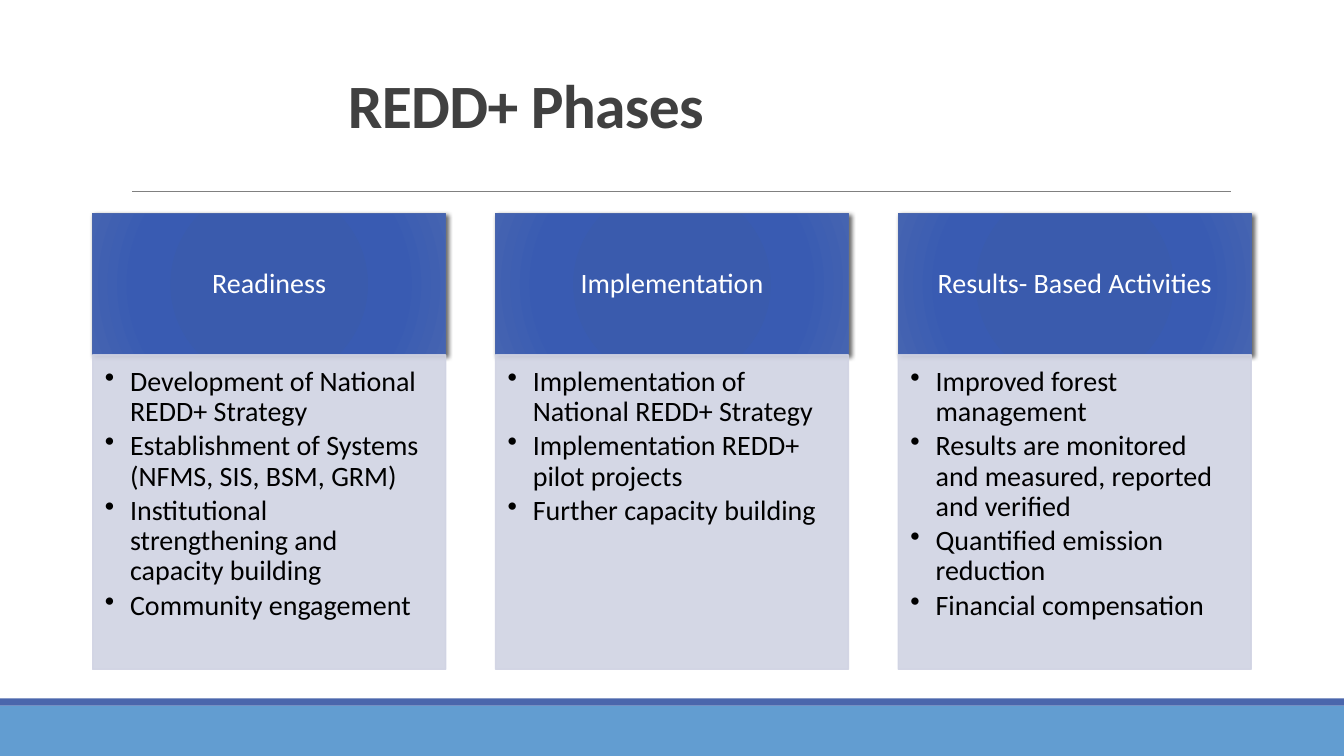
from dataclasses import dataclass

from lxml.etree import SubElement
from pptx import Presentation
from pptx.dml.color import RGBColor
from pptx.enum.shapes import MSO_CONNECTOR, MSO_SHAPE
from pptx.enum.text import MSO_ANCHOR, MSO_AUTO_SIZE, PP_ALIGN
from pptx.oxml import parse_xml
from pptx.oxml.ns import nsdecls, qn
from pptx.util import Inches, Pt


@dataclass(frozen=True)
class Theme:
    """Colours, font and type sizes of the slide."""
    font: str = "Calibri"
    title_size: int = 44
    text_size: int = 20
    title: str = "404040"
    heading: str = "FFFFFF"
    bullet: str = "000000"
    rule: str = "808080"
    band: str = "629DD1"
    accent: str = "4A66AC"
    panel: str = "D0D3E3"
    shadow: str = "000000"
    glow: tuple = ((0, "3759AE"), (34, "3A5BAD"), (70, "395BB2"), (100, "4564B1"))


THEME = Theme()
SLIDE_WIDTH, SLIDE_HEIGHT = 13.33, 7.5
COLUMNS_LEFT, COLUMNS_RIGHT, COLUMN_WIDTH = 0.92, 12.41, 3.5
HEADING_TOP, HEADING_HEIGHT, PANEL_HEIGHT = 2.12, 1.4, 3.12
PANEL_OPACITY = 90

PHASES = {
    "Readiness": [
        "Development of National REDD+ Strategy",
        "Establishment of Systems (NFMS, SIS, BSM, GRM)",
        "Institutional strengthening and capacity building",
        "Community engagement",
    ],
    "Implementation": [
        "Implementation of National REDD+ Strategy",
        "Implementation REDD+ pilot projects",
        "Further capacity building",
    ],
    "Results- Based Activities": [
        "Improved forest management",
        "Results are monitored and measured, reported and verified",
        "Quantified emission reduction",
        "Financial compensation",
    ],
}

TITLE_FRAME = {"vertical_anchor": MSO_ANCHOR.BOTTOM, "auto_size": MSO_AUTO_SIZE.NONE,
               "word_wrap": True}
HEADING_FRAME = {"vertical_anchor": MSO_ANCHOR.MIDDLE, "word_wrap": True,
                 "margin_left": Inches(0.16), "margin_top": Inches(0.09),
                 "margin_right": Inches(0.16), "margin_bottom": Inches(0.09)}
PANEL_FRAME = {"vertical_anchor": MSO_ANCHOR.TOP, "word_wrap": True,
               "margin_left": Inches(0.12), "margin_top": Inches(0.12),
               "margin_right": Inches(0.16), "margin_bottom": Inches(0.17)}
TITLE_PARAGRAPH = {"alignment": PP_ALIGN.LEFT, "line_spacing": 0.85}
HEADING_PARAGRAPH = {"alignment": PP_ALIGN.CENTER, "line_spacing": 0.9}
BULLET_PARAGRAPH = {"alignment": PP_ALIGN.LEFT, "line_spacing": 0.9,
                    "space_after": Pt(3), "level": 1}


def apply_format(target, values):
    """Set every attribute in values on target."""
    for name, value in values.items():
        setattr(target, name, value)


def write_paragraph(paragraph, text, paragraph_format, size, color, bold=False):
    """Write one formatted run into a paragraph and return the run."""
    apply_format(paragraph, paragraph_format)
    run = paragraph.add_run()
    run.text = text
    apply_format(run.font, {"name": THEME.font, "size": Pt(size), "bold": bold})
    run.font.color.rgb = RGBColor.from_string(color)
    return run


def add_bullet(paragraph):
    """Give a paragraph a hanging round bullet."""
    properties = paragraph._p.get_or_add_pPr()
    properties.set("marL", str(Inches(0.25)))
    properties.set("indent", str(-Inches(0.25)))
    SubElement(properties, qn("a:buChar"), char="•")


def set_opacity(color_format_parent, percent):
    """Make the solid colour below an element partly transparent."""
    color = color_format_parent.find(qn("a:solidFill"))[0]
    SubElement(color, qn("a:alpha"), val=str(percent * 1000))


def add_block(slide, left, top, width, height, color, line_color=None):
    """Add a flat rectangle with an optional outline."""
    block = slide.shapes.add_shape(MSO_SHAPE.RECTANGLE, Inches(left), Inches(top),
                                   Inches(width), Inches(height))
    block.fill.solid()
    block.fill.fore_color.rgb = RGBColor.from_string(color)
    if line_color:
        block.line.color.rgb = RGBColor.from_string(line_color)
        block.line.width = Pt(1)
    else:
        block.line.fill.background()
    block.shadow.inherit = False
    return block


def add_glow(block):
    """Swap a block's fill for a radial gradient and cast a soft shadow."""
    properties = block.element.spPr
    stops = "".join(f'<a:gs pos="{position * 1000}"><a:srgbClr val="{color}"/></a:gs>'
                    for position, color in THEME.glow)
    gradient = parse_xml(
        f'<a:gradFill {nsdecls("a")} rotWithShape="1"><a:gsLst>{stops}</a:gsLst>'
        '<a:path path="circle"><a:fillToRect l="100000" t="100000" r="100000" b="100000"/>'
        '</a:path></a:gradFill>')
    properties.replace(properties.find(qn("a:solidFill")), gradient)
    shadow = SubElement(properties.find(qn("a:effectLst")), qn("a:outerShdw"),
                        blurRad=str(Pt(3)), dist=str(Pt(2)), dir=str(45 * 60000),
                        algn="ctr", rotWithShape="0")
    shadow_color = SubElement(shadow, qn("a:srgbClr"), val=THEME.shadow)
    SubElement(shadow_color, qn("a:alpha"), val="60000")


def add_title(slide, text):
    """Place and fill the title placeholder."""
    title = slide.shapes.title
    apply_format(title, {"left": Inches(3.35), "top": Inches(0),
                         "width": Inches(8.93), "height": Inches(1.45)})
    apply_format(title.text_frame, TITLE_FRAME)
    run = write_paragraph(title.text_frame.paragraphs[0], text, TITLE_PARAGRAPH,
                          THEME.title_size, THEME.title, bold=True)
    run.font._element.set("spc", "-50")


def add_rule(slide):
    """Draw the thin line under the title."""
    rule = slide.shapes.add_connector(MSO_CONNECTOR.STRAIGHT, Inches(1.31), Inches(1.9),
                                      Inches(12.21), Inches(1.9))
    rule.line.color.rgb = RGBColor.from_string(THEME.rule)
    rule.line.width = Pt(0.5)
    SubElement(rule.element.spPr, qn("a:effectLst"))


def add_phase(slide, left, name, activities):
    """Add one phase: a heading block above its list of activities."""
    panel_top = HEADING_TOP + HEADING_HEIGHT
    heading = add_block(slide, left, HEADING_TOP, COLUMN_WIDTH, HEADING_HEIGHT,
                        THEME.accent, THEME.accent)
    add_glow(heading)
    apply_format(heading.text_frame, HEADING_FRAME)
    write_paragraph(heading.text_frame.paragraphs[0], name, HEADING_PARAGRAPH,
                    THEME.text_size, THEME.heading)

    panel = add_block(slide, left, panel_top, COLUMN_WIDTH, PANEL_HEIGHT,
                      THEME.panel, THEME.panel)
    properties = panel.element.spPr
    for painted in (properties, properties.find(qn("a:ln"))):
        set_opacity(painted, PANEL_OPACITY)
    frame = panel.text_frame
    apply_format(frame, PANEL_FRAME)
    for index, activity in enumerate(activities):
        paragraph = frame.add_paragraph() if index else frame.paragraphs[0]
        write_paragraph(paragraph, activity, BULLET_PARAGRAPH,
                        THEME.text_size, THEME.bullet)
        add_bullet(paragraph)


def main():
    """Build the slide and save it."""
    presentation = Presentation()
    presentation.slide_width = Inches(SLIDE_WIDTH)
    presentation.slide_height = Inches(SLIDE_HEIGHT)
    slide = presentation.slides.add_slide(presentation.slide_layouts[5])

    add_block(slide, 0, 7, SLIDE_WIDTH, 0.5, THEME.band)
    add_block(slide, 0, 6.93, SLIDE_WIDTH, 0.07, THEME.accent)
    add_rule(slide)
    add_title(slide, "REDD+ Phases")

    pitch = (COLUMNS_RIGHT - COLUMNS_LEFT - COLUMN_WIDTH) / (len(PHASES) - 1)
    for index, (name, activities) in enumerate(PHASES.items()):
        add_phase(slide, COLUMNS_LEFT + index * pitch, name, activities)

    presentation.save("out.pptx")


if __name__ == "__main__":
    main()
